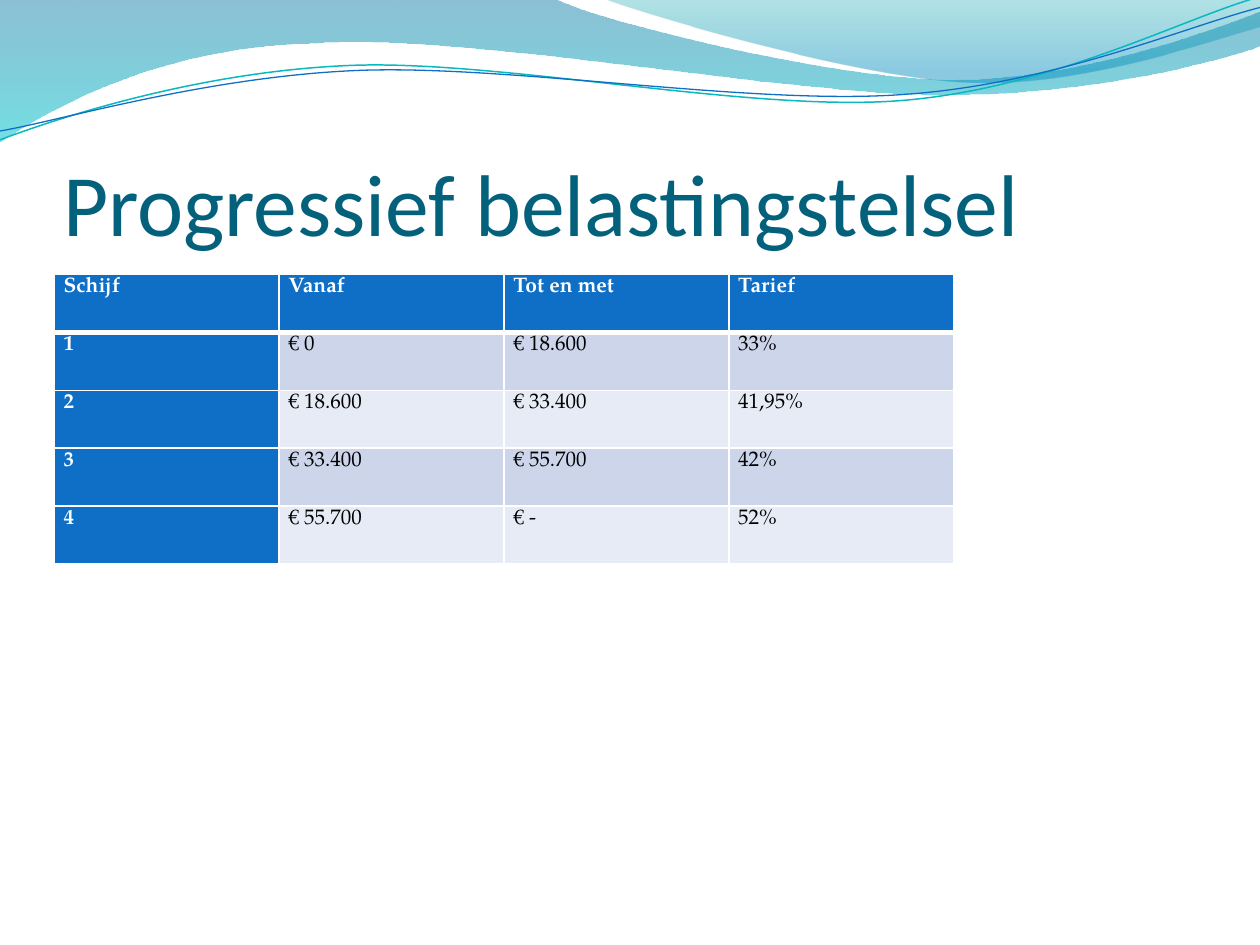
import math

from lxml import etree
from pptx import Presentation
from pptx import util as u
from pptx.dml.color import RGBColor
from pptx.enum import text
from pptx.oxml.ns import qn

COLORS = {
    "title": "04617B", "accent": "0F6FC6", "teal": "0AB8BF",
    "band_dark": "CCD5EA", "band_light": "E7EBF5",
    "white": "FFFFFF", "black": "000000",
    "wave_top": "0074A1", "wave_bottom": "00C6CF",
    "crest_top": "00A1A9", "crest_bottom": "008BBF",
}

# Each outline is a start point followed by segments: a segment of one point
# is straight, a segment of three points is a cubic curve
BROAD_WAVE = [
    [(0, 0)], [(4.4, -0.01)],
    [(4.76, 0.17), (6.64, 0.63), (7.58, 0.63)],
    [(8.53, 0.63), (9.58, 0.26), (10, 0.09)],
    [(10.01, 0.36)],
    [(9.83, 0.44), (8.7, 0.76), (7.46, 0.75)],
    [(6.22, 0.75), (3.82, 0.28), (2.57, 0.34)],
    [(1.29, 0.36), (0.46, 0.83), (-0.01, 1.13)],
    [(0, 0)],
]
CREST = [
    [(4.79, -0.01)],
    [(5.09, 0.11), (6.82, 0.62), (7.69, 0.65)],
    [(8.56, 0.69), (9.61, 0.32), (10, 0.21)],
    [(10, 0)], [(4.79, -0.01)],
]
TEAL_LINE = [
    [(0, 1.11)],
    [(0.48, 0.93), (1.58, 0.57), (2.77, 0.52)],
    [(3.95, 0.47), (5.93, 0.89), (7.13, 0.8)],
    [(8.33, 0.71), (9.38, 0.15), (9.98, -0.02)],
]
BLUE_LINE = [
    [(0, 1.04)],
    [(0.47, 0.96), (1.64, 0.61), (2.83, 0.56)],
    [(4.03, 0.51), (5.97, 0.84), (7.17, 0.75)],
    [(8.36, 0.67), (9.41, 0.21), (10, 0.06)],
]
LINE_TILT = -2.7

TAX_BRACKETS = [
    ["Schijf", "Vanaf", "Tot en met", "Tarief"],
    ["1", "€ 0", "€ 18.600", "33%"],
    ["2", "€ 18.600", "€ 33.400", "41,95%"],
    ["3", "€ 33.400", "€ 55.700", "42%"],
    ["4", "€ 55.700", "€ -", "52%"],
]


def rgb(name):
    return RGBColor.from_string(COLORS[name])


def write(frame, content, font, size, color, bold=False, line_spacing=None, after=None):
    paragraph = frame.paragraphs[0]
    paragraph.alignment = text.PP_ALIGN.LEFT
    paragraph.line_spacing = line_spacing
    paragraph.space_after = after
    run = paragraph.add_run()
    run.text = content
    run.font.name, run.font.size, run.font.bold = font, u.Pt(size), bold
    run.font.color.rgb = rgb(color)


def turn(point, degrees):
    """Rotate a point about the slide's top left corner."""
    x, y = point
    cos, sin = math.cos(math.radians(degrees)), math.sin(math.radians(degrees))
    return x * cos - y * sin, x * sin + y * cos


class Deck:
    heading_font = "Calibri"
    body_font = "TeX Gyre Pagella"

    def __init__(self):
        self.presentation = Presentation()
        self.presentation.slide_width = u.Inches(10)
        self.presentation.slide_height = u.Inches(7.5)
        self.slide = self.presentation.slides.add_slide(self.presentation.slide_layouts[5])

    def outline(self, segments, close, tilt=0):
        points = [turn(point, -tilt) for segment in segments for point in segment]
        points = [(u.Inches(x), u.Inches(y)) for x, y in points]
        builder = self.slide.shapes.build_freeform(*points[0])
        builder.add_line_segments(points[1:], close=close)
        shape = builder.convert_to_shape()
        shape.shadow.inherit = False
        # Join each group of three points into one cubic curve
        steps = iter(list(shape._element.iter(qn("a:lnTo"))))
        for segment in segments[1:]:
            group = [next(steps) for _ in segment]
            if len(group) == 3:
                curve = etree.Element(qn("a:cubicBezTo"))
                group[0].addprevious(curve)
                for step in group:
                    curve.append(step[0])
                    step.getparent().remove(step)
        # Tilt the shape about its own centre
        if tilt:
            x, y = turn((shape.left + shape.width / 2, shape.top + shape.height / 2), tilt)
            shape.left = int(x - shape.width / 2)
            shape.top = int(y - shape.height / 2)
            shape.rotation = tilt
        return shape

    def wave(self, segments, stops):
        shape = self.outline(segments, close=True)
        shape.line.fill.background()
        shape.fill.gradient()
        shape.fill.gradient_angle = 270
        for stop, (position, color, _) in zip(shape.fill.gradient_stops, stops):
            stop.position = position
            stop.color.rgb = rgb(color)
        for node, (_, _, opacity) in zip(shape._element.spPr.iter(qn("a:srgbClr")), stops):
            etree.SubElement(node, qn("a:alpha"), val=str(opacity * 1000))

    def curve(self, segments, color, width):
        shape = self.outline(segments, close=False, tilt=LINE_TILT)
        shape.fill.background()
        shape.line.color.rgb = rgb(color)
        shape.line.width = u.Pt(width)

    def title(self, content, left, top, width, height):
        heading = self.slide.shapes.title
        heading.left, heading.top = u.Inches(left), u.Inches(top)
        heading.width, heading.height = u.Inches(width), u.Inches(height)
        frame = heading.text_frame
        frame.auto_size = text.MSO_AUTO_SIZE.NONE
        frame.vertical_anchor = text.MSO_ANCHOR.BOTTOM
        frame.margin_left = frame.margin_right = frame.margin_bottom = 0
        frame.margin_top = u.Inches(0.05)
        write(frame, content, self.heading_font, 50, "title")
        self.slide.shapes._spTree.append(heading._element)  # in front of the waves

    def borders(self, cell, **widths):
        properties = cell._tc.get_or_add_tcPr()
        for side, width in widths.items():
            line = etree.SubElement(properties, qn("a:ln" + side), w=str(u.Pt(width)))
            fill = etree.SubElement(line, qn("a:solidFill"))
            etree.SubElement(fill, qn("a:srgbClr"), val=COLORS["white"])

    def table(self, rows, left, top, width, height):
        grid = self.slide.shapes.add_table(
            len(rows), len(rows[0]), u.Inches(left), u.Inches(top),
            u.Inches(width), u.Inches(height)).table
        for r, values in enumerate(rows):
            for c, value in enumerate(values):
                cell = grid.cell(r, c)
                emphasized = r == 0 or c == 0
                band = "band_dark" if r % 2 else "band_light"
                cell.margin_left = cell.margin_right = u.Pt(5.4)
                cell.margin_top = cell.margin_bottom = 0
                edge = 3 if r == 1 else 1
                self.borders(cell, L=1, R=1, T=edge, B=3 if r == 0 else 1)
                cell.fill.solid()
                cell.fill.fore_color.rgb = rgb("accent" if emphasized else band)
                write(cell.text_frame, value, self.body_font, 12,
                      "white" if emphasized else "black", bold=emphasized,
                      line_spacing=1.15, after=u.Pt(10))


def main():
    deck = Deck()
    # Wave decoration along the top
    deck.wave(BROAD_WAVE, [(0, "wave_top", 45), (1, "wave_bottom", 55)])
    deck.wave(CREST, [(0, "crest_top", 30), (0.8, "crest_bottom", 45)])
    deck.curve(TEAL_LINE, "teal", 0.85)
    deck.curve(BLUE_LINE, "accent", 0.75)
    # Title and tax brackets
    deck.title("Progressief belastingstelsel", 0.5, 0.77, 9, 1.25)
    deck.table(TAX_BRACKETS, 0.43, 2.18, 7.14, 2.295)
    deck.presentation.save("out.pptx")


if __name__ == "__main__":
    main()
